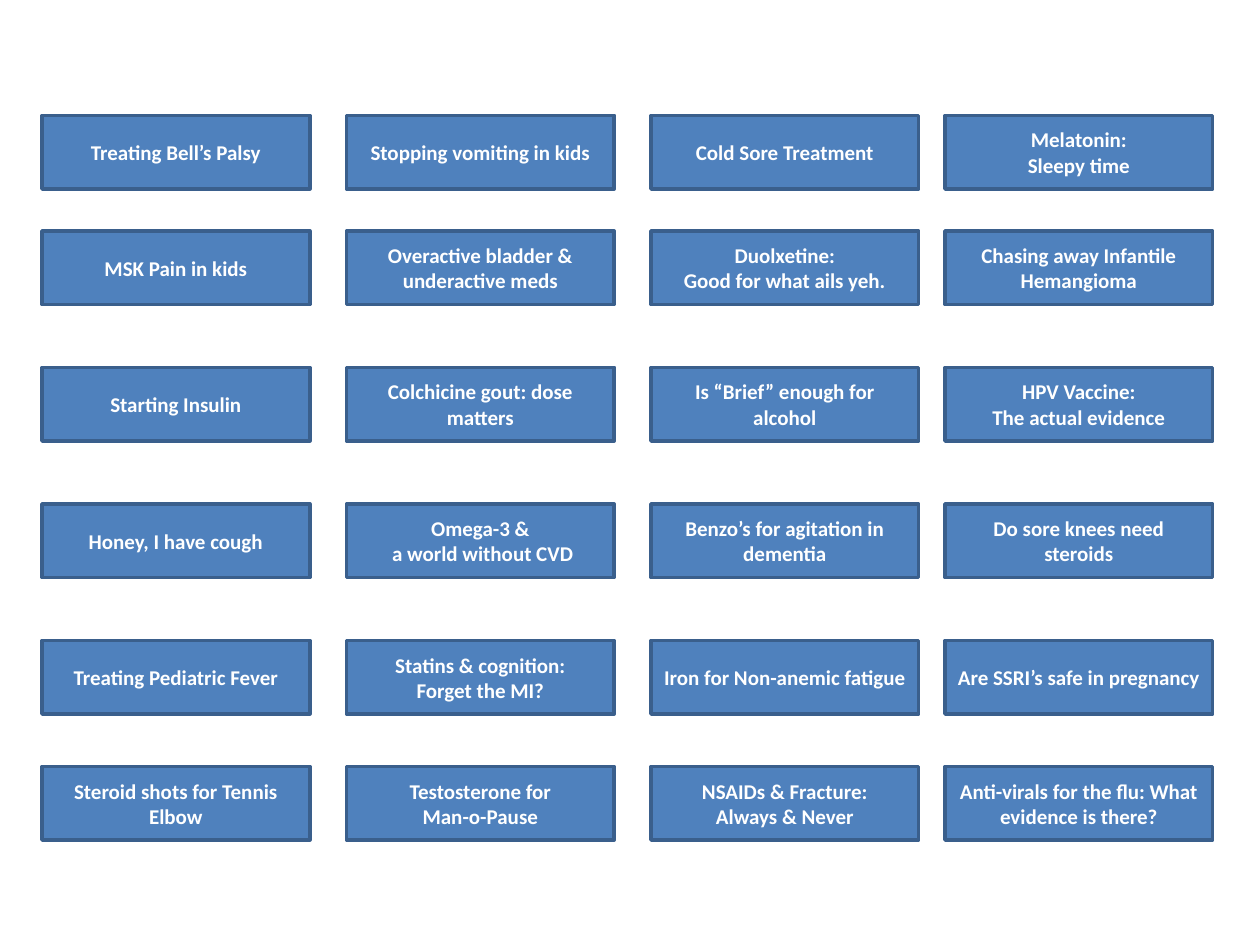
from pptx import Presentation
from pptx.dml.color import RGBColor
from pptx.enum.shapes import MSO_SHAPE
from pptx.enum.text import MSO_ANCHOR, PP_ALIGN
from pptx.util import Inches, Pt

BUTTON = MSO_SHAPE.ACTION_BUTTON_CUSTOM
MIDDLE = MSO_ANCHOR.MIDDLE
CENTER = PP_ALIGN.CENTER

COLORS = {"fill": "4F81BD", "line": "3A5F8C", "text": "FFFFFF"}
FONT = "Calibri"

# The slide is a grid of 120 columns by 90 rows, 12 to the inch.
UNIT = Inches(1) // 12
SLIDE_COLS, SLIDE_ROWS = 120, 90
BUTTON_COLS, BUTTON_ROWS = 25.5, 7
COLUMN_STARTS = [4, 33, 62, 90]

# Start row of each line of buttons, with its topics from left to right
TOPICS = {
    11: ["Treating Bell’s Palsy", "Stopping vomiting in kids",
         "Cold Sore Treatment", "Melatonin:\nSleepy time"],
    22: ["MSK Pain in kids", "Overactive bladder & underactive meds",
         "Duolxetine:\nGood for what ails yeh.",
         "Chasing away Infantile Hemangioma"],
    35: ["Starting Insulin", "Colchicine gout: dose matters",
         "Is “Brief” enough for alcohol", "HPV Vaccine:\nThe actual evidence"],
    48: ["Honey, I have cough", "Omega-3 &\n a world without CVD",
         "Benzo’s for agitation in dementia", "Do sore knees need steroids"],
    61: ["Treating Pediatric Fever", "Statins & cognition:\nForget the MI?",
         "Iron for Non-anemic fatigue", "Are SSRI’s safe in pregnancy"],
    73: ["Steroid shots for Tennis Elbow", "Testosterone for\nMan-o-Pause",
         "NSAIDs & Fracture:\nAlways & Never",
         "Anti-virals for the flu: What evidence is there?"],
}


def color(name):
    return RGBColor.from_string(COLORS[name])


def add_button(slide, box, text):
    """Place one topic button; box is left, top, width, height in grid units."""
    sp = slide.shapes.add_shape(BUTTON, *(int(n * UNIT) for n in box))
    sp.shadow.inherit = False
    sp.fill.solid()
    sp.fill.fore_color.rgb = color("fill")
    sp.line.color.rgb = color("line")
    sp.line.width = Pt(2)

    tf = sp.text_frame
    tf.word_wrap = True
    tf.vertical_anchor = MIDDLE
    tf.text = text
    for p in tf.paragraphs:
        p.alignment = CENTER
        for r in p.runs:
            r.font.name = FONT
            r.font.size = Pt(12)
            r.font.bold = True
            r.font.color.rgb = color("text")


def add_topic_board(slide):
    for top, topics in TOPICS.items():
        for left, topic in zip(COLUMN_STARTS, topics):
            add_button(slide, (left, top, BUTTON_COLS, BUTTON_ROWS), topic)


def main():
    prs = Presentation()
    prs.slide_width = SLIDE_COLS * UNIT
    prs.slide_height = SLIDE_ROWS * UNIT
    add_topic_board(prs.slides.add_slide(prs.slide_layouts[6]))
    prs.save("out.pptx")


if __name__ == "__main__":
    main()
